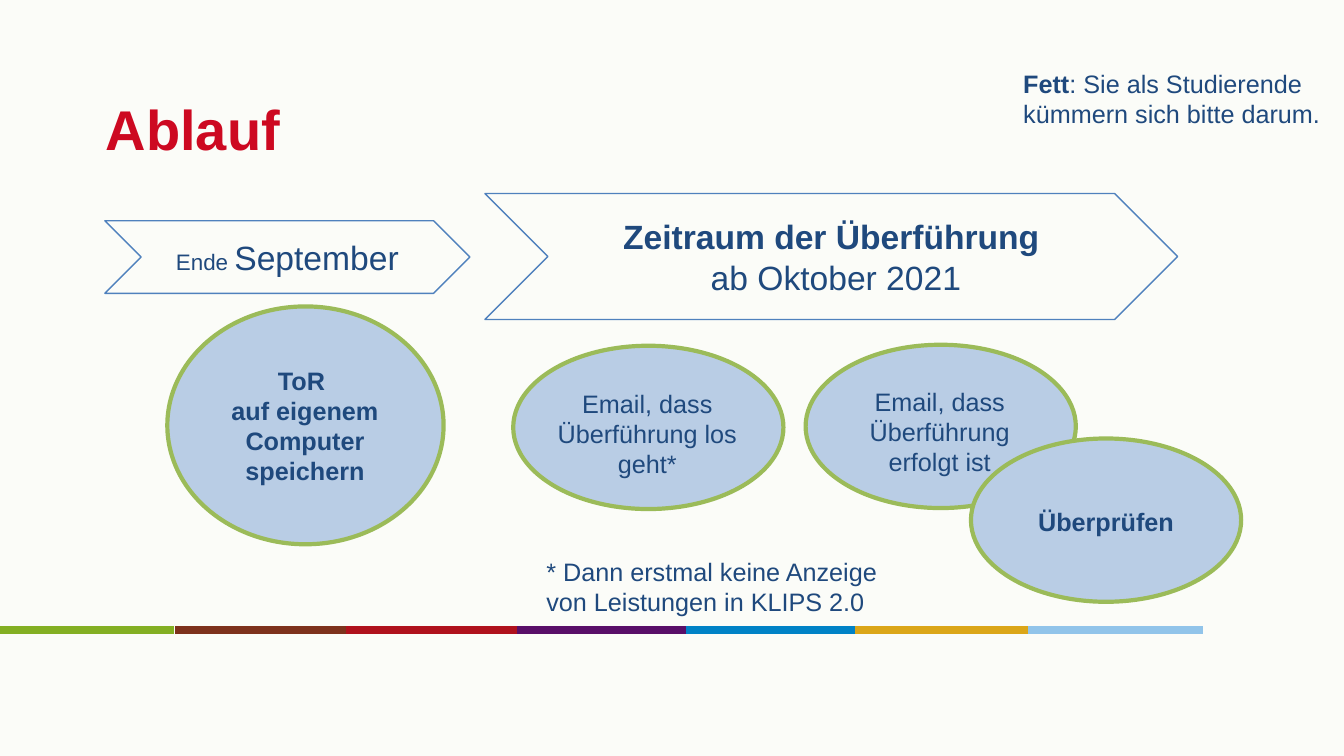
from pptx import Presentation
from pptx.dml.color import RGBColor
from pptx.enum.shapes import MSO_CONNECTOR, MSO_SHAPE
from pptx.enum.text import MSO_ANCHOR, PP_ALIGN
from pptx.oxml.ns import qn
from pptx.util import Inches, Pt

STRAIGHT = MSO_CONNECTOR.STRAIGHT
CHEVRON, OVAL = MSO_SHAPE.CHEVRON, MSO_SHAPE.OVAL
MIDDLE, TOP = MSO_ANCHOR.MIDDLE, MSO_ANCHOR.TOP
LEFT, CENTER = PP_ALIGN.LEFT, PP_ALIGN.CENTER

PAPER, NAVY, RED = "FBFCF8", "1F497D", "CD0921"
BLUE, PALE_BLUE, GREEN = "4F81BD", "B9CDE5", "9BBB59"


def color(value):
    return RGBColor.from_string(value)


def write(shape, lines, align, anchor=TOP, ink=NAVY):
    """Fill a shape with lines, each a list of (text, size, bold) spans."""
    frame = shape.text_frame
    frame.word_wrap = True
    frame.vertical_anchor = anchor
    for index, spans in enumerate(lines):
        para = frame.add_paragraph() if index else frame.paragraphs[0]
        para.alignment = align
        for text, size, bold in spans:
            span = para.add_run()
            span.text = text
            span.font.name = "Arial"
            span.font.size = Pt(size)
            span.font.bold = bold
            span.font.color.rgb = color(ink)


deck = Presentation()
deck.slide_width, deck.slide_height = Inches(13.33), Inches(7.5)
page = deck.slides.add_slide(deck.slide_layouts[5])
shapes = page.shapes
page.background.fill.solid()
page.background.fill.fore_color.rgb = color(PAPER)

# Title
title = shapes.title
title.left, title.top = Inches(1), Inches(0.65)
title.width, title.height = Inches(11.33), Inches(1.25)
frame = title.text_frame
frame.margin_left = frame.margin_right = Inches(0.05)
frame.margin_top = frame.margin_bottom = Inches(0.05)
write(title, [[("Ablauf", 40, True)]], LEFT, MIDDLE, RED)

# Coloured stripe along the foot
stripes = [(0, "83AF23"), (1.74, "7D321D"), (3.43, "AF111D"), (5.13, "590F68"),
           (6.8, "0082C6"), (8.48, "DBA619"), (10.2, "91C4EA")]
for left, ink in stripes:
    stripe = shapes.add_connector(STRAIGHT, Inches(left), Inches(6.25),
                                  Inches(left + 1.73), Inches(6.25))
    stripe.line.color.rgb = color(ink)
    stripe.line.width = Pt(5.5)
    properties = stripe._element.spPr
    properties.append(properties.makeelement(qn("a:effectLst"), {}))

# Phases and steps: kind, place, fill, line colour, line width
phase = (CHEVRON, PAPER, BLUE, 1)
step = (OVAL, PALE_BLUE, GREEN, 3)
outlines = [
    (phase, (1.04, 2.19, 3.62, 0.72)),
    (phase, (4.81, 1.92, 6.87, 1.25)),
    (step, (1.66, 3.04, 2.74, 2.36)),
    (step, (5.09, 3.43, 2.68, 1.62)),
    (step, (7.99, 3.42, 2.68, 1.62)),
    (step, (9.63, 4.35, 2.68, 1.62)),
]
# Wording of each phase and step; a step has its own text box
wording = [
    (None, [[("Ende ", 16, False), ("September", 24, False)]]),
    (None, [[("Zeitraum der Überführung", 24, True)],
            [(" ab Oktober 2021", 24, False)]]),
    ((1.9, 3.57, 2.25, 1.31), [[("ToR ", 18, True)],
                               [("auf eigenem Computer speichern", 18, True)]]),
    ((5.32, 3.8, 2.2, 1.01), [[("Email, dass Überführung los geht*", 18, False)]]),
    ((8.22, 3.78, 2.2, 1.01), [[("Email, dass Überführung erfolgt ist", 18, False)]]),
    ((9.87, 4.97, 2.2, 0.4), [[("Überprüfen", 18, True)]]),
]
for ((kind, fill, ink, width), place), (text_place, lines) in zip(outlines, wording):
    shape = shapes.add_shape(kind, *map(Inches, place))
    shape.shadow.inherit = False
    shape.fill.solid()
    shape.fill.fore_color.rgb = color(fill)
    shape.line.color.rgb = color(ink)
    shape.line.width = Pt(width)
    if text_place:
        write(shapes.add_textbox(*map(Inches, text_place)), lines, CENTER)
    else:
        write(shape, lines, CENTER, MIDDLE)

# Key and footnote
key = shapes.add_textbox(Inches(10.05), Inches(0.63), Inches(3.47), Inches(0.71))
write(key, [[("Fett", 18, True),
             (": Sie als Studierende kümmern sich bitte darum.", 18, False)]], LEFT)
footnote = shapes.add_textbox(Inches(5.32), Inches(5.47), Inches(3.65), Inches(1.01))
write(footnote, [[("* Dann erstmal keine Anzeige von Leistungen in KLIPS 2.0",
                   18, False)]], LEFT)

deck.save("out.pptx")
